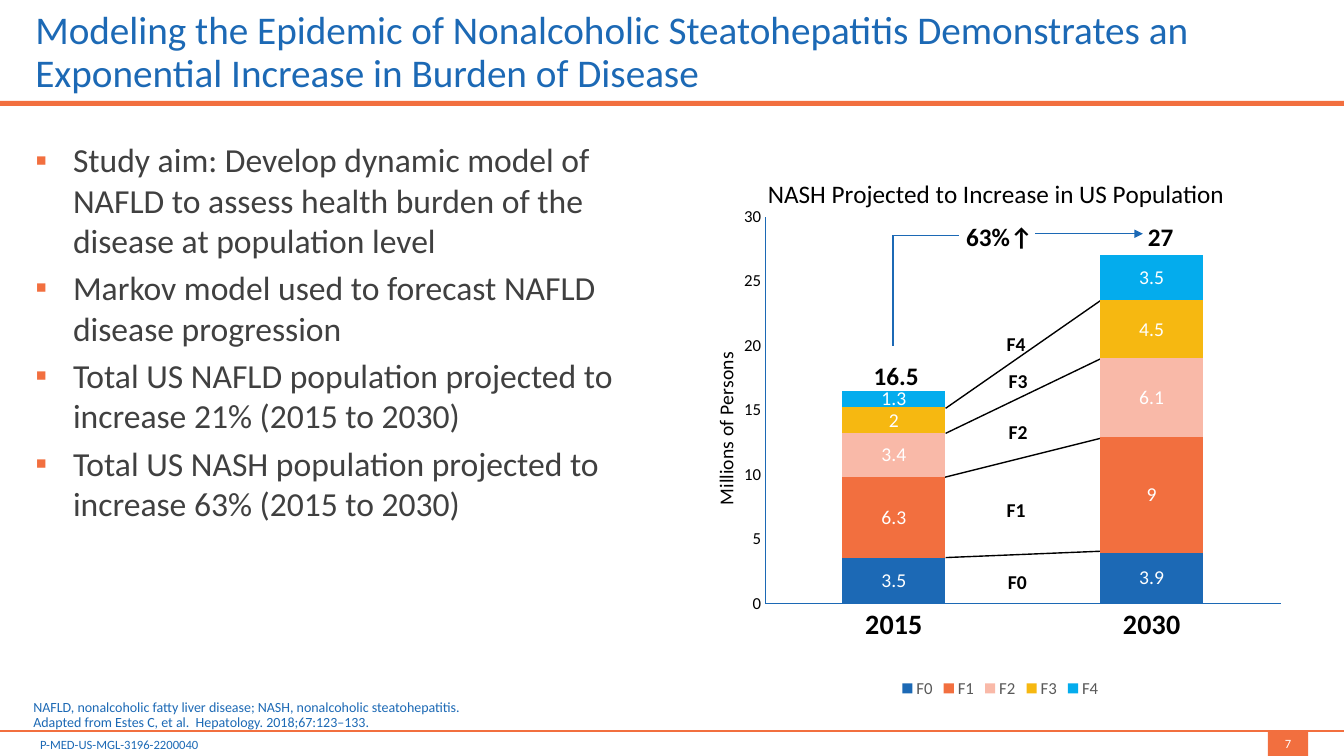
from dataclasses import dataclass

from lxml.etree import SubElement
from pptx import Presentation
from pptx.chart.data import CategoryChartData
from pptx.dml.color import RGBColor
from pptx.enum.chart import XL_CHART_TYPE, XL_LABEL_POSITION, XL_LEGEND_POSITION, XL_TICK_MARK
from pptx.enum.shapes import MSO_CONNECTOR, MSO_SHAPE
from pptx.enum.text import MSO_ANCHOR, MSO_AUTO_SIZE, PP_ALIGN
from pptx.oxml import parse_xml
from pptx.oxml.ns import nsdecls, qn
from pptx.util import Cm, Pt


@dataclass(frozen=True)
class Theme:
    """Colours, font and type sizes of the slide."""
    font: str = "Calibri"
    blue: str = "1C69B5"
    orange: str = "F26F3F"
    pink: str = "F9B9A8"
    yellow: str = "F6B811"
    cyan: str = "04ACED"
    white: str = "FFFFFF"
    black: str = "000000"
    body_grey: str = "404040"
    legend_grey: str = "595959"
    title_size: int = 28
    body_size: int = 24
    year_size: int = 20
    heading_size: int = 18
    label_size: int = 14
    axis_size: int = 12
    note_size: int = 10
    small_size: int = 9


THEME = Theme()
AIMS = [
    "Study aim: Develop dynamic model of NAFLD to assess health burden of the disease "
    "at population level",
    "Markov model used to forecast NAFLD disease progression",
    "Total US NAFLD population projected to increase 21% (2015 to 2030)",
    "Total US NASH population projected to increase 63% (2015 to 2030)",
]
STAGES = [
    ("F0", (3.5, 3.9), THEME.blue),
    ("F1", (6.3, 9), THEME.orange),
    ("F2", (3.4, 6.1), THEME.pink),
    ("F3", (2, 4.5), THEME.yellow),
    ("F4", (1.3, 3.5), THEME.cyan),
]
STAGE_LINKS = [
    (23.75, 12.04, 28.12, 10.95),
    (23.83, 10.29, 27.74, 7.57),
    (23.83, 10.92, 27.74, 9.04),
    (23.83, 14.05, 27.74, 13.89),
]
STAGE_LABELS = [
    ("F0", 25.15, 14.22), ("F1", 25.12, 12.42), ("F2", 25.17, 10.46),
    ("F3", 25.17, 9.17), ("F4", 25.12, 8.23),
]
TOTALS = [("16.5", 21.77, 8.94, 1.45), ("27", 28.68, 5.44, 0.94), ("63%↑", 24.1, 5.44, 1.85)]


def style(font, size, color, bold=False):
    """Set name, size, colour and weight of a font."""
    font.name, font.size, font.bold = THEME.font, Pt(size), bold
    font.color.rgb = RGBColor.from_string(color)


def write(frame, text, size, color, bold=False, align=PP_ALIGN.LEFT, anchor=MSO_ANCHOR.TOP,
          insets=(0, 0, 0, 0), wrap=True, line_spacing=None):
    """Put formatted text in a text frame."""
    frame.auto_size, frame.word_wrap, frame.vertical_anchor = MSO_AUTO_SIZE.NONE, wrap, anchor
    frame.margin_left, frame.margin_top, frame.margin_right, frame.margin_bottom = map(Cm, insets)
    frame.text = text
    for para in frame.paragraphs:
        para.alignment, para.space_before = align, Pt(0)
        if line_spacing:
            para.line_spacing = line_spacing
        for span in para.runs:
            style(span.font, size, color, bold)


def move(shape, left, top, width, height):
    """Place a shape by lengths in centimetres."""
    shape.left, shape.top, shape.width, shape.height = map(Cm, (left, top, width, height))


def set_bullets(frame):
    """Give every paragraph an orange square bullet and a gap above all but the first."""
    for number, para in enumerate(frame.paragraphs):
        para.space_before = Pt(5 if number else 0)
        properties = para._p.get_or_add_pPr()
        properties.set("marL", str(Cm(0.95)))
        properties.set("indent", str(-Cm(0.95)))
        color = SubElement(properties, qn("a:buClr"))
        SubElement(color, qn("a:srgbClr"), val=THEME.orange)
        SubElement(properties, qn("a:buChar"), char="▪")


def remove_bullets(frame):
    """Take bullets and indents off every paragraph."""
    for para in frame.paragraphs:
        properties = para._p.get_or_add_pPr()
        properties.set("marL", "0")
        properties.set("indent", "0")
        SubElement(properties, qn("a:buNone"))


def add_block(slide, left, top, width, height):
    """Add a plain orange rectangle."""
    block = slide.shapes.add_shape(MSO_SHAPE.RECTANGLE, *map(Cm, (left, top, width, height)))
    block.shadow.inherit = False
    block.fill.solid()
    block.fill.fore_color.rgb = RGBColor.from_string(THEME.orange)
    block.line.fill.background()
    return block


def add_line(slide, ends, color, arrow=False):
    """Add a thin straight line, with an arrowhead at its end on request."""
    line = slide.shapes.add_connector(MSO_CONNECTOR.STRAIGHT, *map(Cm, ends))
    line.line.width = Pt(1)
    line.line.color.rgb = RGBColor.from_string(color)
    properties = line._element.spPr
    if arrow:
        SubElement(properties.find(qn("a:ln")), qn("a:tailEnd"), type="triangle")
    SubElement(properties, qn("a:effectLst"))


def add_label(slide, text, left, top, width, height, size, **text_format):
    """Add a one-line text box."""
    box = slide.shapes.add_textbox(*map(Cm, (left, top, width, height)))
    write(box.text_frame, text, size, insets=(0.25, 0.13, 0, 0.13), wrap=False, **text_format)


def set_layout(element, index, **measures):
    """Give a chart part a manual layout in fractions of the chart."""
    for former in element.findall(qn("c:layout")):
        element.remove(former)
    layout = parse_xml(f"<c:layout {nsdecls('c')}><c:manualLayout/></c:layout>")
    for name, value in measures.items():
        SubElement(layout[0], qn(f"c:{name}"), val=str(value))
    element.insert(index, layout)


def set_chart_title(title, text, size, left, top):
    """Write a chart or axis title and place it."""
    title.text_frame.text = text
    style(title.text_frame.paragraphs[0].runs[0].font, size, THEME.black)
    set_layout(title._element, 1, xMode="edge", yMode="edge", x=left, y=top)


def format_axis(axis, size, bold=False):
    """Format the line and tick labels of an axis."""
    axis.major_tick_mark = axis.minor_tick_mark = XL_TICK_MARK.NONE
    axis.has_major_gridlines = False
    axis.format.line.width = Pt(0.75)
    axis.format.line.color.rgb = RGBColor.from_string(THEME.blue)
    style(axis.tick_labels.font, size, THEME.black, bold)


def add_stage_chart(slide):
    """Add the stacked columns of persons by fibrosis stage."""
    data = CategoryChartData()
    data.categories = ["2015", "2030"]
    for name, values, _ in STAGES:
        data.add_series(name, values)
    chart = slide.shapes.add_chart(
        XL_CHART_TYPE.COLUMN_STACKED, *map(Cm, (17.55, 3.76, 15.32, 13.94)), data).chart
    style(chart.font, THEME.note_size, THEME.black)
    chart._chartSpace.chart.addnext(parse_xml(
        f"<c:spPr {nsdecls('c', 'a')}><a:noFill/><a:ln><a:noFill/></a:ln></c:spPr>"))
    set_chart_title(chart.chart_title, "NASH Projected to Increase in US Population",
                    THEME.heading_size, 0.11, 0.04)
    format_axis(chart.category_axis, THEME.year_size, bold=True)
    persons = chart.value_axis
    format_axis(persons, THEME.axis_size)
    persons.minimum_scale, persons.maximum_scale, persons.major_unit = 0, 30, 5
    set_chart_title(persons.axis_title, "Millions of Persons", THEME.label_size, 0.02, 0.36)
    persons.axis_title.text_frame._txBody.bodyPr.set("rot", "-5400000")
    plot = chart.plots[0]
    plot.gap_width, plot.overlap, plot.vary_by_categories = 150, 100, False
    set_layout(chart._chartSpace.chart.plotArea, 0, layoutTarget="inner", xMode="edge",
               yMode="edge", x=0.113, y=0.122, w=0.848, h=0.699)
    for series, (_, _, color) in zip(plot.series, STAGES):
        series.format.fill.solid()
        series.format.fill.fore_color.rgb = RGBColor.from_string(color)
        labels = series.data_labels
        labels.show_value, labels.position = True, XL_LABEL_POSITION.CENTER
        style(labels.font, THEME.label_size, THEME.white)
    chart.has_legend = True
    chart.legend.position, chart.legend.include_in_layout = XL_LEGEND_POSITION.BOTTOM, False
    style(chart.legend.font, THEME.axis_size, THEME.legend_grey)


def fill_placeholders(slide):
    """Write the title, the bullet list and the footnote."""
    title, body, note = slide.shapes.title, slide.placeholders[1], slide.placeholders[2]
    move(title, 0.89, 0, 30.15, 2.54)
    write(title.text_frame, "Modeling the Epidemic of Nonalcoholic Steatohepatitis Demonstrates "
          "an Exponential Increase in Burden of Disease", THEME.title_size, THEME.blue,
          anchor=MSO_ANCHOR.BOTTOM, insets=(0, 0.13, 0, 0.13), line_spacing=0.9)
    move(body, 0.89, 3.51, 15.42, 13.49)
    write(body.text_frame, "\n".join(AIMS), THEME.body_size, THEME.body_grey)
    set_bullets(body.text_frame)
    move(note, 0.84, 17.65, 28.27, 0.76)
    write(note.text_frame, "NAFLD, nonalcoholic fatty liver disease; NASH, nonalcoholic "
          "steatohepatitis.\vAdapted from Estes C, et al.  Hepatology. 2018;67:123–133.",
          THEME.note_size, THEME.blue, anchor=MSO_ANCHOR.BOTTOM, line_spacing=0.9)
    remove_bullets(note.text_frame)


def main():
    """Build the slide and save it."""
    deck = Presentation()
    deck.slide_width, deck.slide_height = Cm(33.87), Cm(19.05)
    page = deck.slides.add_slide(deck.slide_layouts[3])
    fill_placeholders(page)
    add_block(page, 0, 2.54, 33.87, 0.13)
    add_line(page, (0, 18.42, 33.87, 18.42), THEME.orange)
    badge = add_block(page, 31.95, 18.42, 1.02, 0.63)
    write(badge.text_frame, "7", THEME.small_size, THEME.white, align=PP_ALIGN.CENTER,
          anchor=MSO_ANCHOR.MIDDLE)
    add_label(page, "P-MED-US-MGL-3196-2200040", 0.76, 18.44, 4.52, 0.63, THEME.small_size,
              color=THEME.blue)
    for ends in STAGE_LINKS:
        add_line(page, ends, THEME.black)
    for text, left, top, width in TOTALS:
        add_label(page, text, left, top, width, 1.04, THEME.heading_size,
                  color=THEME.black, bold=True)
    add_line(page, (22.5, 8.71, 22.5, 5.94), THEME.blue)
    add_line(page, (22.48, 5.94, 24.16, 5.94), THEME.blue)
    add_line(page, (26.09, 5.89, 28.8, 5.89), THEME.blue, arrow=True)
    for text, left, top in STAGE_LABELS:
        add_label(page, text, left, top, 0.76, 0.84, THEME.label_size,
                  color=THEME.black, bold=True)
    add_stage_chart(page)
    deck.save("out.pptx")


if __name__ == "__main__":
    main()
